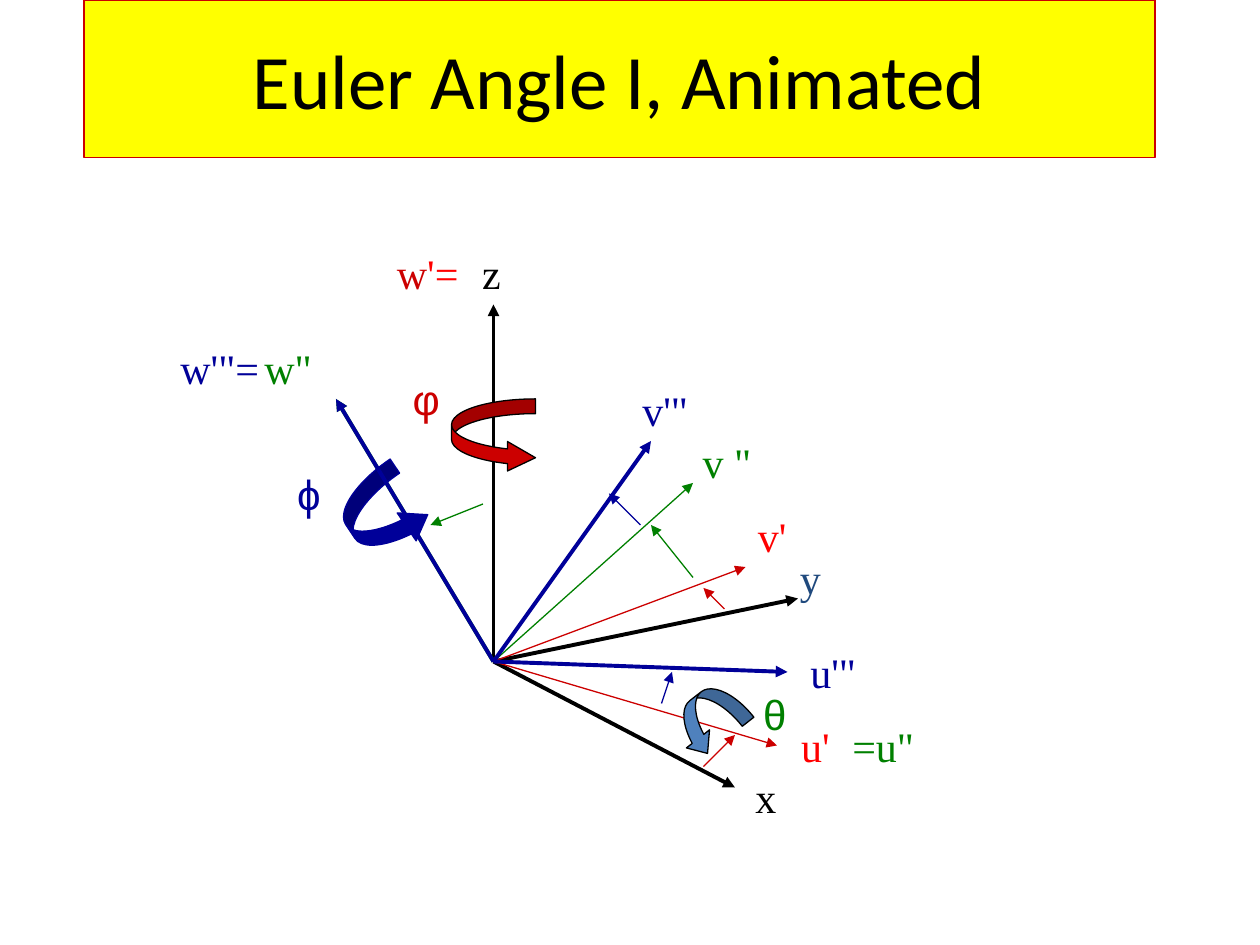
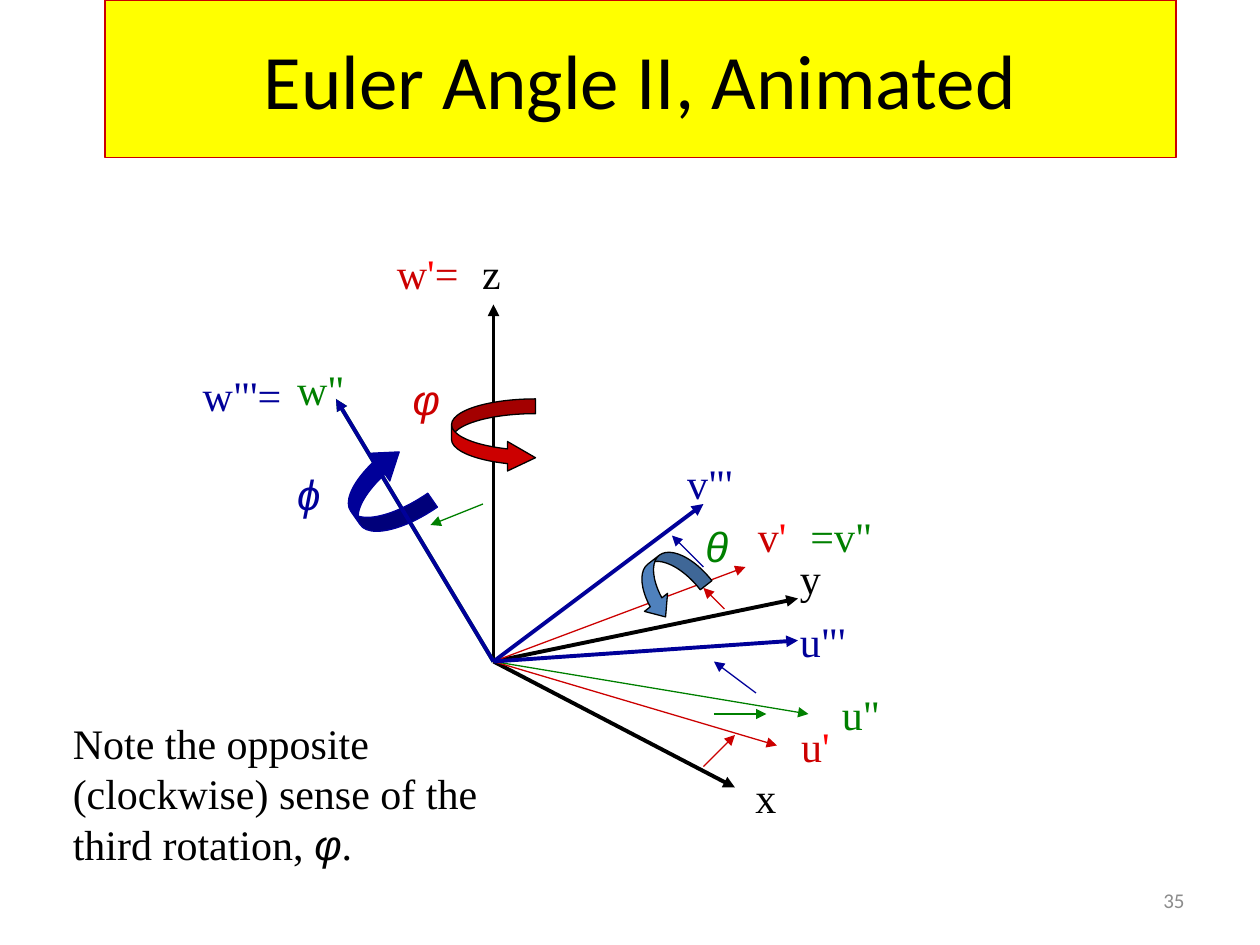
from dataclasses import dataclass

from lxml.etree import SubElement
from pptx import Presentation
from pptx.dml.color import RGBColor
from pptx.enum.shapes import MSO_CONNECTOR, MSO_SHAPE
from pptx.enum.text import MSO_ANCHOR, MSO_AUTO_SIZE, PP_ALIGN
from pptx.oxml.ns import qn
from pptx.util import Pt

PX = 9525  # EMU per px: 96 px to the inch
LABEL_HEIGHT = 48
ORIGIN = (376, 504)  # where all axes start


@dataclass(frozen=True)
class Theme:
    black: str = "000000"
    yellow: str = "FFFF00"
    red: str = "CC0000"
    bright_red: str = "FF0000"
    green: str = "008000"
    blue: str = "000099"
    navy: str = "1F497D"
    steel: str = "4F81BD"
    grey: str = "8C8C8C"
    title_size: int = 44
    text_size: int = 24
    number_size: int = 12
    thin: float = 0.75
    thick: float = 2.25
    sans: str = "Calibri"
    serif: str = "Times New Roman"
    greek: str = "Arial"


THEME = Theme()


@dataclass(frozen=True)
class Turn:
    """Curved arrow around an axis; box is relative to the origin."""
    box: tuple
    adjustments: tuple
    fill: str
    outline: str = THEME.black
    rotation: float = 0
    flipped: bool = False


@dataclass(frozen=True)
class Stage:
    """One coordinate frame: axes (dx, dy), sweeps (from, to), and labels
    (left, top, width, runs), where a run is (text, colour)."""
    colour: str
    axes: tuple
    labels: tuple
    weight: float = THEME.thin
    sweeps: tuple = ()
    turn: Turn = None
    symbol: tuple = None  # (left, top, width, Greek letter)


def px(*lengths):
    return [length * PX for length in lengths]


def rgb(colour):
    return RGBColor.from_string(colour)


def write(paragraph, text, colour=THEME.black, size=THEME.text_size,
          font=THEME.serif, italic=False):
    run = paragraph.add_run()
    run.text = text
    run.font.name, run.font.size = font, Pt(size)
    run.font.italic = italic
    run.font.color.rgb = rgb(colour)


def add_textbox(slide, box, wrap=False, fit=True):
    frame = slide.shapes.add_textbox(*px(*box)).text_frame
    frame.word_wrap = wrap
    frame.auto_size = MSO_AUTO_SIZE.SHAPE_TO_FIT_TEXT if fit else MSO_AUTO_SIZE.NONE
    return frame


def paint(shape, fill, outline):
    shape.fill.solid()
    shape.fill.fore_color.rgb = rgb(fill)
    shape.line.color.rgb = rgb(outline)
    shape.line.width = Pt(THEME.thin)


def add_arrow(slide, origin, start, end, colour, weight):
    ends = [base + offset for point in (start, end)
            for base, offset in zip(origin, point)]
    arrow = slide.shapes.add_connector(MSO_CONNECTOR.STRAIGHT, *px(*ends))
    arrow.line.color.rgb = rgb(colour)
    arrow.line.width = Pt(weight)
    properties = arrow.element.spPr
    SubElement(properties.find(qn("a:ln")), qn("a:tailEnd"), type="triangle")
    SubElement(properties, qn("a:effectLst"))


def add_turn(slide, origin, turn):
    left, top, width, height = turn.box
    arrow = slide.shapes.add_shape(
        MSO_SHAPE.CURVED_RIGHT_ARROW,
        *px(origin[0] + left, origin[1] + top, width, height))
    arrow.shadow.inherit = False
    paint(arrow, turn.fill, turn.outline)
    for index, value in enumerate(turn.adjustments):
        arrow.adjustments[index] = value
    arrow.rotation = turn.rotation
    if turn.flipped:
        arrow.element.spPr.find(qn("a:xfrm")).set("flipV", "1")


def add_label(slide, origin, left, top, width, runs, **style):
    box = (origin[0] + left, origin[1] + top, width, LABEL_HEIGHT)
    paragraph = add_textbox(slide, box).paragraphs[0]
    for text, colour in runs:
        write(paragraph, text, colour=colour, **style)


def add_stage(slide, origin, stage, italic):
    if stage.turn:
        add_turn(slide, origin, stage.turn)
    for tip in stage.axes:
        weight = THEME.thick if tip == W_TIP else stage.weight
        add_arrow(slide, origin, (0, 0), tip, stage.colour, weight)
    for start, end in stage.sweeps:
        add_arrow(slide, origin, start, end, stage.colour, THEME.thin)
    for label in stage.labels:
        add_label(slide, origin, *label)
    if stage.symbol:
        *place, letter = stage.symbol
        add_label(slide, origin, *place, [(letter, stage.colour)],
                  font=THEME.greek, italic=italic)


W_TIP = (-120, -200)


def fixed_frame(y_colour):
    return Stage(
        THEME.black, weight=THEME.thick,
        axes=((0, -272), (232, -48), (184, 96)),
        labels=((190, 79, 36, [("x", THEME.black)]),
                (224, -88, 36, [("y", y_colour)]),
                (-18, -320, 34, [("z", THEME.black)])))


def first_rotation(u_runs, v_runs, w_runs):
    return Stage(
        THEME.red,
        axes=((216, 64), (192, -72)),
        sweeps=(((160, 80), (184, 56)), ((176, -40), (160, -56))),
        turn=Turn((-32, -200, 64, 56), (0.2, 0.4, 0.38), THEME.red),
        symbol=(-71, -224, 36, "φ"),
        labels=((225, 40, 41, u_runs), (192, -120, 41, v_runs),
                (-83, -320, 66, w_runs)))


def second_rotation(moved_tip, moved_sweep, turn_at, symbol_at, labels):
    return Stage(
        THEME.green,
        axes=(moved_tip, W_TIP),
        sweeps=(moved_sweep, ((-8, -120), (-48, -104))),
        turn=Turn((*turn_at, 40, 56), (0.28, 0.56, 0.33), THEME.steel,
                  rotation=52),
        symbol=(*symbol_at, 36, "θ"),
        labels=[(*place, [(text, THEME.green)]) for *place, text in labels])


def third_rotation(v_tip, u_tip, sweeps, turn_top, labels, rotation, flipped=False):
    return Stage(
        THEME.blue, weight=THEME.thick,
        axes=(v_tip, u_tip, W_TIP),
        sweeps=sweeps,
        turn=Turn((-112, turn_top, 56, 64), (0.23, 0.46, 0.33), THEME.blue,
                  THEME.blue, rotation, flipped),
        symbol=(-159, -152, 38, "ϕ"),
        labels=[(*place, [(text, THEME.blue)]) for *place, text in labels])


ANGLES_I = (
    fixed_frame(y_colour=THEME.navy),
    first_rotation([("u'", THEME.bright_red)], [("v'", THEME.bright_red)],
                   [("w", THEME.red), ("'=", THEME.bright_red)]),
    second_rotation(
        moved_tip=(152, -136), moved_sweep=((152, -64), (120, -104)),
        turn_at=(144, 16), symbol_at=(196, 16),
        labels=((150, -176, 57, 'v "'), (-184, -248, 56, 'w"'),
                (264, 40, 66, '=u"'))),
    third_rotation(
        v_tip=(120, -168), u_tip=(224, 8),
        sweeps=(((112, -104), (88, -128)), ((128, 32), (136, 8))),
        turn_top=-144, rotation=325.9,
        labels=((104, -216, 54, "v'\""), (232, -16, 54, "u'\""),
                (-248, -248, 79, "w'\"="))),
)

ANGLES_II = (
    fixed_frame(y_colour=THEME.black),
    first_rotation([("u", THEME.red), ("'", THEME.bright_red)],
                   [("v", THEME.red), ("'", THEME.bright_red)],
                   [("w", THEME.red), ("'", THEME.bright_red), ("=", THEME.red)]),
    second_rotation(
        moved_tip=(240, 40), moved_sweep=((168, 40), (208, 40)),
        turn_at=(112, -88), symbol_at=(152, -112),
        labels=((232, -120, 66, '=v"'), (-159, -232, 56, 'w"'),
                (256, 16, 48, 'u"'))),
    third_rotation(
        v_tip=(160, -120), u_tip=(232, -16),
        sweeps=(((160, -72), (136, -96)), ((200, 24), (168, 0))),
        turn_top=-160, rotation=325.3, flipped=True,
        labels=((138, -160, 54, "v\"'"), (224, -40, 54, "u\"'"),
                (-231, -227, 80, "w\"'="))),
)


def add_title(slide, text, box):
    title = slide.shapes.title
    title.left, title.top, title.width, title.height = px(*box)
    paint(title, THEME.yellow, THEME.red)
    title.text_frame.vertical_anchor = MSO_ANCHOR.MIDDLE
    paragraph = title.text_frame.paragraphs[0]
    paragraph.alignment = PP_ALIGN.CENTER
    write(paragraph, text, size=THEME.title_size, font=THEME.sans)


def add_note(slide, box):
    paragraph = add_textbox(slide, box, wrap=True).paragraphs[0]
    write(paragraph, "Note the opposite (clockwise) sense of the third rotation, ")
    write(paragraph, "φ", font=THEME.greek, italic=True)
    write(paragraph, ".")


def add_slide_number(slide, text, box):
    frame = add_textbox(slide, box, wrap=True, fit=False)
    frame.vertical_anchor = MSO_ANCHOR.MIDDLE
    frame.paragraphs[0].alignment = PP_ALIGN.RIGHT
    write(frame.paragraphs[0], text, colour=THEME.grey,
          size=THEME.number_size, font=THEME.sans)


def add_angle_slide(deck, title, title_left, stages, italic=False):
    slide = deck.slides.add_slide(deck.slide_layouts.get_by_name("Title Only"))
    add_title(slide, title, (title_left, 0, 816, 120))
    for stage in stages:
        add_stage(slide, ORIGIN, stage, italic)
    return slide


def main():
    deck = Presentation()
    deck.slide_width, deck.slide_height = px(960, 720)
    add_angle_slide(deck, "Euler Angle I, Animated", 64, ANGLES_I)
    second = add_angle_slide(deck, "Euler Angle II, Animated", 80, ANGLES_II,
                             italic=True)
    add_note(second, (46, 542, 346, 125))
    add_slide_number(second, "35", (688, 667, 224, 38))
    deck.save("out.pptx")


if __name__ == "__main__":
    main()
